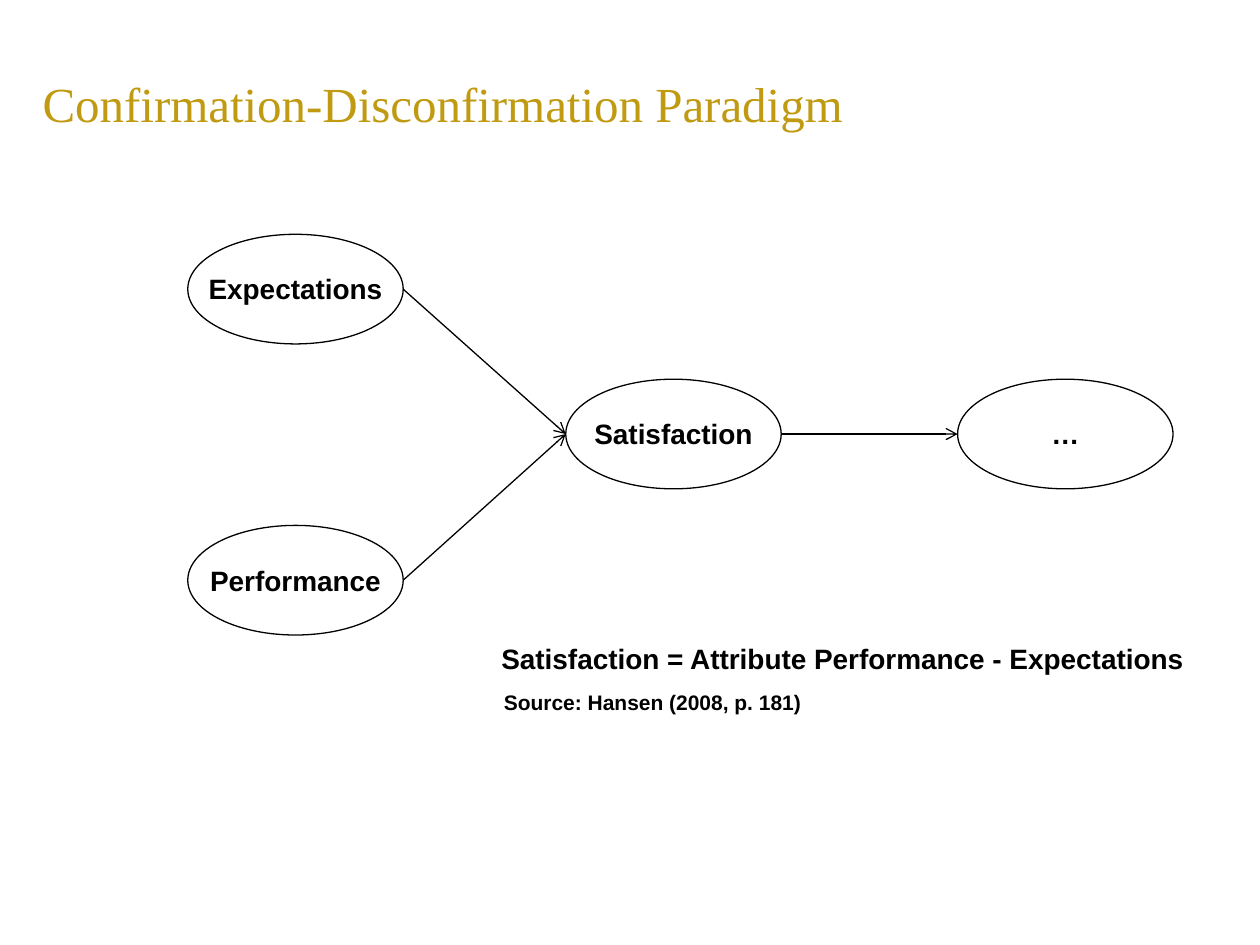
from lxml.etree import SubElement
from pptx import Presentation
from pptx.dml.color import RGBColor
from pptx.enum.shapes import MSO_CONNECTOR, MSO_SHAPE
from pptx.enum.text import MSO_ANCHOR, PP_ALIGN
from pptx.oxml.ns import qn
from pptx.util import Inches, Pt

COLORS = {"gold": "C09B12", "ink": "000000"}
TITLE = "Confirmation-Disconfirmation Paradigm"
FORMULA = "Satisfaction = Attribute Performance - Expectations"
SOURCE = "Source: Hansen (2008, p. 181)"

# name: left, top of each oval
NODES = {
    "Expectations": (1.49, 1.86),
    "Performance": (1.49, 4.17),
    "Satisfaction": (4.49, 3.01),
    "…": (7.6, 3.01),
}
LINKS = [
    ("Performance", "Satisfaction"),
    ("Expectations", "Satisfaction"),
    ("Satisfaction", "…"),
]
OVAL_W, OVAL_H, LABEL_H = 1.71, 0.87, 0.37
LEFT, RIGHT = 1, 3


def color(name):
    return RGBColor.from_string(COLORS[name])


def add_text(slide, text, box, size=16, font="Arial", ink="ink", bold=True,
             align=PP_ALIGN.LEFT, anchor=MSO_ANCHOR.TOP, wrap=True):
    shape = slide.shapes.add_textbox(*map(Inches, box))
    frame = shape.text_frame
    frame.word_wrap = wrap
    frame.vertical_anchor = anchor
    para = frame.paragraphs[0]
    para.text = text
    para.alignment = align
    para.font.name = font
    para.font.size = Pt(size)
    para.font.bold = bold
    para.font.color.rgb = color(ink)
    return shape


def set_line(shape):
    shape.line.color.rgb = color("ink")
    shape.line.width = Pt(0.75)


def add_node(slide, name, left, top):
    """Draw an oval with its label; return the label, as wide as the oval."""
    oval = slide.shapes.add_shape(
        MSO_SHAPE.OVAL, *map(Inches, (left, top, OVAL_W, OVAL_H)))
    oval.shadow.inherit = False
    oval.fill.background()
    set_line(oval)
    label_top = top + (OVAL_H - LABEL_H) / 2
    return add_text(slide, name, (left, label_top, OVAL_W, LABEL_H),
                    align=PP_ALIGN.CENTER)


def add_arrow(slide, start, end):
    arrow = slide.shapes.add_connector(MSO_CONNECTOR.STRAIGHT, 0, 0, 0, 0)
    arrow.begin_connect(start, RIGHT)
    arrow.end_connect(end, LEFT)
    set_line(arrow)
    SubElement(arrow.line._get_or_add_ln(), qn("a:tailEnd"), type="arrow")
    SubElement(arrow._element.spPr, qn("a:effectLst"))


def main():
    deck = Presentation()
    deck.slide_width, deck.slide_height = Inches(10), Inches(7.5)
    slide = deck.slides.add_slide(deck.slide_layouts[6])

    add_text(slide, TITLE, (0.24, 0.43, 6.97, 0.77), 28, "Times New Roman",
             "gold", bold=False, anchor=MSO_ANCHOR.MIDDLE)
    labels = {name: add_node(slide, name, *spot)
              for name, spot in NODES.items()}
    for start, end in LINKS:
        add_arrow(slide, labels[start], labels[end])
    add_text(slide, FORMULA, (3.88, 5.04, 5.69, 0.37), wrap=False)
    add_text(slide, SOURCE, (3.9, 5.42, 2.91, 0.3), 12)

    deck.save("out.pptx")


if __name__ == "__main__":
    main()
